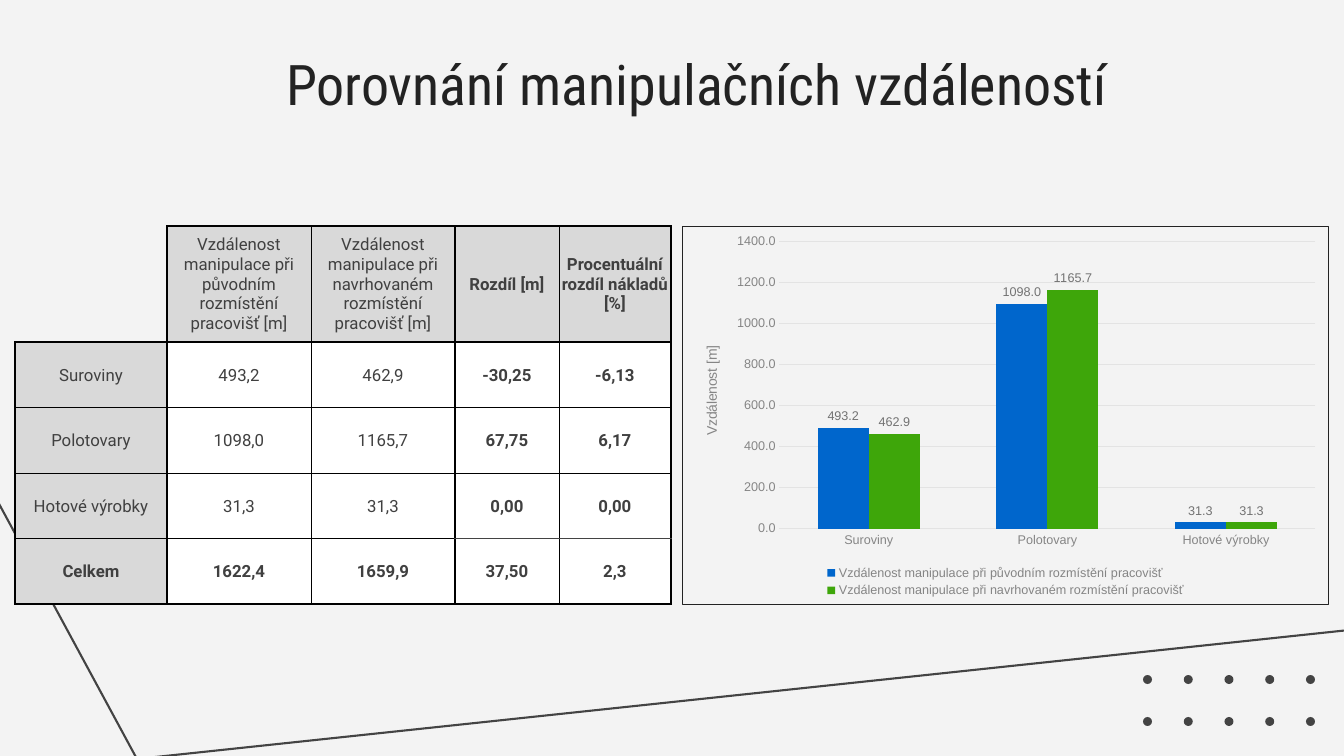
from dataclasses import dataclass

from lxml import etree
from pptx import Presentation
from pptx import util as u
from pptx.chart.data import CategoryChartData
from pptx.dml.color import RGBColor
from pptx.enum import chart as charts, shapes, text
from pptx.oxml import parse_xml
from pptx.oxml.ns import nsdecls, qn

EMU_PER_PX = 914400 / 100.8


@dataclass(frozen=True)
class Theme:
    background: str = "F3F3F3"
    decoration: str = "434343"
    title: str = "222222"
    table_text: str = "404040"
    header: str = "D9D9D9"
    body: str = "FFFFFF"
    border: str = "000000"
    chart_text: str = "858585"
    label_text: str = "727272"
    grid: str = "E3E3E3"
    series: tuple = ("0066CC", "3EA60A")
    title_font: str = "Roboto Condensed"
    table_font: str = "Roboto"
    chart_font: str = "Arial"
    title_size: int = 40
    table_size: int = 12
    axis_title_size: int = 10
    chart_size: int = 9


THEME = Theme()
CATEGORIES = ["Suroviny", "Polotovary", "Hotové výrobky"]
SERIES = {
    "Vzdálenost manipulace při původním rozmístění pracovišť": (493.2, 1098.0, 31.3),
    "Vzdálenost manipulace při navrhovaném rozmístění pracovišť": (462.9, 1165.7, 31.3),
}
TABLE_ROWS = [
    ["", *(f"{name} [m]" for name in SERIES), "Rozdíl [m]", "Procentuální rozdíl nákladů [%]"],
    ["Suroviny", "493,2", "462,9", "-30,25", "-6,13"],
    ["Polotovary", "1098,0", "1165,7", "67,75", "6,17"],
    ["Hotové výrobky", "31,3", "31,3", "0,00", "0,00"],
    ["Celkem", "1622,4", "1659,9", "37,50", "2,3"],
]
COLUMN_WIDTHS = [152, 144, 144, 104, 112]
HEADER_HEIGHT = 116


def px(length):
    return u.Emu(round(length * EMU_PER_PX))


def place(box):
    return [px(length) for length in box]


def rgb(value):
    return RGBColor.from_string(value)


def style_font(font, name, size, color, bold=False):
    font.name, font.size, font.bold = name, u.Pt(size), bold
    font.color.rgb = rgb(color)


def add_dots(slide, box, columns=5, rows=2, size=9):
    left, top, width, height = box
    step_x = (width - size) / (columns - 1)
    step_y = (height - size) / (rows - 1)
    for index in range(columns * rows):
        row, column = divmod(index, columns)
        dot_box = (left + column * step_x, top + row * step_y, size, size)
        dot = slide.shapes.add_shape(shapes.MSO_SHAPE.OVAL, *place(dot_box))
        dot.shadow.inherit = False
        dot.fill.solid()
        dot.fill.fore_color.rgb = rgb(THEME.decoration)
        dot.line.fill.background()


def add_corner_line(slide, box):
    left, top, width, height = box
    builder = slide.shapes.build_freeform(left, top, scale=EMU_PER_PX)
    builder.add_line_segments(
        [(left + 153, top + height), (left + width, top + 153)], close=False)
    line = builder.convert_to_shape()
    line.shadow.inherit = False
    line.fill.background()
    line.line.color.rgb = rgb(THEME.decoration)
    line.line.width = u.Pt(1.5)


def fill_title(slide, box):
    title = slide.shapes.title
    title.left, title.top, title.width, title.height = place(box)
    frame = title.text_frame
    frame.auto_size = text.MSO_AUTO_SIZE.NONE
    frame.word_wrap = True
    frame.vertical_anchor = text.MSO_ANCHOR.TOP
    frame.margin_left = frame.margin_top = frame.margin_right = frame.margin_bottom = px(10)
    paragraph = frame.paragraphs[0]
    paragraph.alignment = text.PP_ALIGN.LEFT
    run = paragraph.add_run()
    run.text = "Porovnání manipulačních vzdáleností"
    style_font(run.font, THEME.title_font, THEME.title_size, THEME.title)


def vertical_edge(row, edge):
    """Line colour and width at a column edge, or None where no line shows."""
    if row == 0 and edge == 0:
        return None
    return THEME.border, 0.5 if edge in (2, 4) else 1


def horizontal_edge(edge, column):
    """Line colour and width at a row edge, or None where no line shows."""
    if edge == 0 and column == 0:
        return None
    if edge == 4 and column > 2:
        return THEME.decoration, 1.5
    thin = edge in (2, 3) or (edge == 4 and column == 0)
    return THEME.border, 0.5 if thin else 1


def set_borders(cell, row, column):
    edges = {
        "lnL": vertical_edge(row, column),
        "lnR": vertical_edge(row, column + 1),
        "lnT": horizontal_edge(row, column),
        "lnB": horizontal_edge(row + 1, column),
    }
    properties = cell._tc.get_or_add_tcPr()
    for tag, edge in edges.items():
        line = etree.SubElement(properties, qn(f"a:{tag}"))
        if edge is None:
            etree.SubElement(line, qn("a:noFill"))
            continue
        color, width = edge
        line.set("w", str(u.Pt(width)))
        fill = etree.SubElement(line, qn("a:solidFill"))
        etree.SubElement(fill, qn("a:srgbClr"), val=color)


def fill_cell(cell, row, column, value):
    set_borders(cell, row, column)
    cell.fill.solid()
    if row == column == 0:
        color = THEME.background
    else:
        color = THEME.body if row and column else THEME.header
    cell.fill.fore_color.rgb = rgb(color)
    cell.margin_left = cell.margin_top = cell.margin_right = px(1)
    cell.margin_bottom = 0
    cell.vertical_anchor = text.MSO_ANCHOR.MIDDLE
    if value:
        paragraph = cell.text_frame.paragraphs[0]
        paragraph.alignment = text.PP_ALIGN.CENTER
        run = paragraph.add_run()
        run.text = value
        bold = column > 2 or row == len(TABLE_ROWS) - 1
        style_font(run.font, THEME.table_font, THEME.table_size, THEME.table_text, bold)


def add_distance_table(slide, box):
    row_count = len(TABLE_ROWS)
    table = slide.shapes.add_table(row_count, len(COLUMN_WIDTHS), *place(box)).table
    table.first_row = table.horz_banding = False
    for column, width in zip(table.columns, COLUMN_WIDTHS):
        column.width = px(width)
    body_height = (box[3] - HEADER_HEIGHT) / (row_count - 1)
    for row, values in enumerate(TABLE_ROWS):
        table.rows[row].height = px(body_height if row else HEADER_HEIGHT)
        for column, value in enumerate(values):
            fill_cell(table.cell(row, column), row, column, value)


def chart_layout(x, y, w, h, target=""):
    """Manual layout in fractions of the chart area."""
    inner = f'<c:layoutTarget val="{target}"/>' if target else ""
    sizes = "".join(f'<c:{key} val="{value}"/>' for key, value in zip("xywh", (x, y, w, h)))
    return parse_xml(
        f'<c:layout {nsdecls("c")}><c:manualLayout>{inner}<c:xMode val="edge"/>'
        f'<c:yMode val="edge"/>{sizes}</c:manualLayout></c:layout>')


def style_axes(chart):
    for axis in (chart.category_axis, chart.value_axis):
        axis.major_tick_mark = axis.minor_tick_mark = charts.XL_TICK_MARK.NONE
        axis.format.line.fill.background()
        style_font(axis.tick_labels.font, THEME.chart_font, THEME.chart_size, THEME.chart_text)
    axis = chart.value_axis
    axis.minimum_scale, axis.maximum_scale, axis.major_unit = 0, 1400, 200
    axis.tick_labels.number_format = "0.0"
    axis.tick_labels.number_format_is_linked = False
    axis.major_gridlines.format.line.color.rgb = rgb(THEME.grid)
    axis.major_gridlines.format.line.width = u.Pt(0.75)
    frame = axis.axis_title.text_frame
    frame._txBody.bodyPr.set("rot", "-5400000")
    run = frame.paragraphs[0].add_run()
    run.text = "Vzdálenost [m]"
    style_font(run.font, THEME.chart_font, THEME.axis_title_size, THEME.chart_text)


def add_distance_chart(slide, box):
    data = CategoryChartData(number_format="0.0")
    data.categories = CATEGORIES
    for name, values in SERIES.items():
        data.add_series(name, values)
    chart = slide.shapes.add_chart(
        charts.XL_CHART_TYPE.COLUMN_CLUSTERED, *place(box), data).chart
    chart.has_title = False
    style_font(chart.font, THEME.chart_font, THEME.axis_title_size, THEME.decoration)
    style_axes(chart)
    plot = chart.plots[0]
    plot.gap_width, plot.overlap, plot.vary_by_categories = 150, 0, False
    for series, color in zip(plot.series, THEME.series):
        series.format.fill.solid()
        series.format.fill.fore_color.rgb = rgb(color)
        labels = series.data_labels
        labels.show_value = True
        labels.position = charts.XL_LABEL_POSITION.OUTSIDE_END
        labels.number_format, labels.number_format_is_linked = "0.0", False
        style_font(labels.font, THEME.chart_font, THEME.chart_size, THEME.label_text)
    chart.has_legend = True
    legend = chart.legend
    legend.position = charts.XL_LEGEND_POSITION.BOTTOM
    legend.include_in_layout = False
    style_font(legend.font, THEME.chart_font, THEME.chart_size, THEME.chart_text)

    chart_space = chart._chartSpace
    for old_layout in list(chart_space.iter(qn("c:layout"))):
        old_layout.getparent().remove(old_layout)
    plot_area = next(chart_space.iter(qn("c:plotArea")))
    plot_area.insert(0, chart_layout(0.15, 0.04, 0.83, 0.76, "inner"))
    overlay = legend._element.find(qn("c:overlay"))
    overlay.addprevious(chart_layout(0.22, 0.89, 0.56, 0.1))
    chart_space.find(qn("c:chart")).addnext(parse_xml(
        f'<c:spPr {nsdecls("c", "a")}><a:noFill/><a:ln w="{u.Pt(1)}"><a:solidFill>'
        f'<a:srgbClr val="{THEME.title}"/></a:solidFill></a:ln></c:spPr>'))


def add_comparison_slide(presentation):
    slide = presentation.slides.add_slide(presentation.slide_layouts[5])
    slide.background.fill.solid()
    slide.background.fill.fore_color.rgb = rgb(THEME.background)
    add_dots(slide, (1143, 675, 172, 51))
    add_corner_line(slide, (-16, 476, 1375, 283))
    add_distance_chart(slide, (682, 226, 647, 379))
    add_distance_table(slide, (15, 226, 656, 378))
    fill_title(slide, (276, 39, 1068, 123))


def main():
    presentation = Presentation()
    presentation.slide_width, presentation.slide_height = px(1344), px(756)
    add_comparison_slide(presentation)
    presentation.save("out.pptx")


if __name__ == "__main__":
    main()
